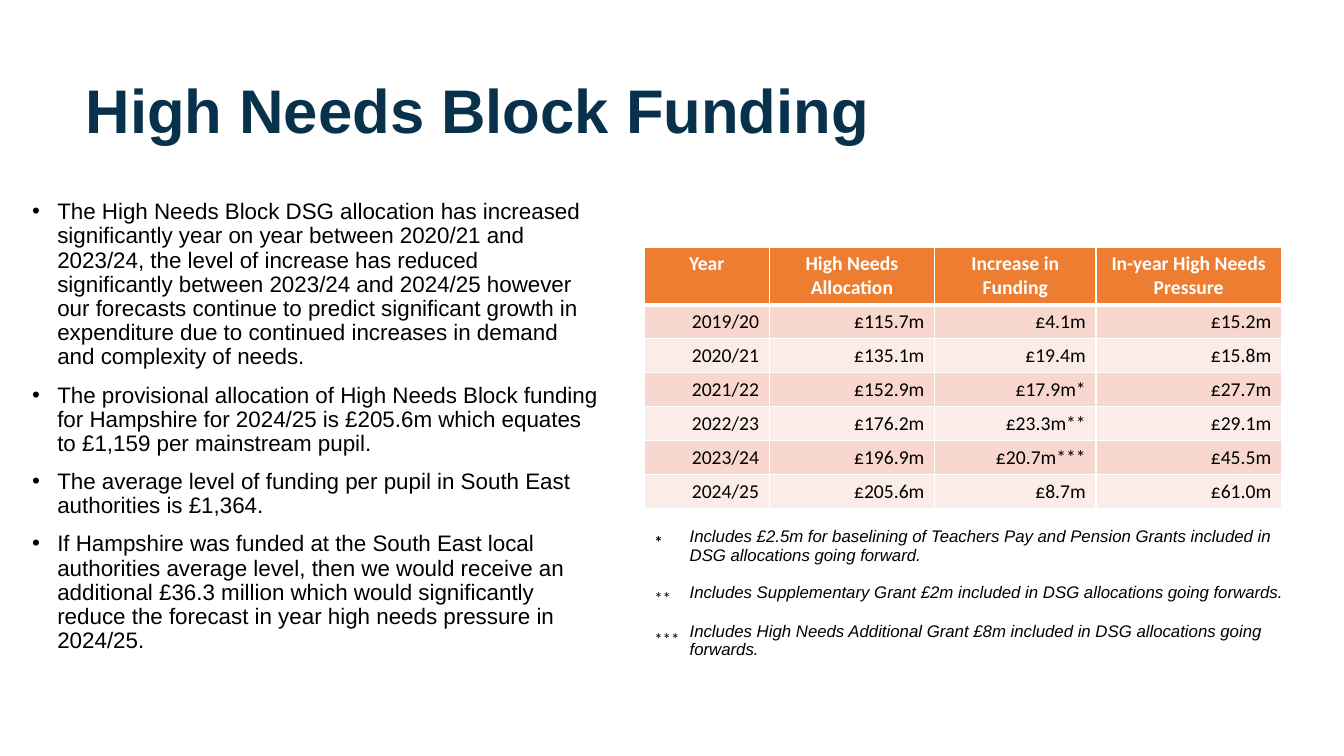
from lxml.etree import SubElement
from pptx import Presentation
from pptx.dml.color import RGBColor
from pptx.enum.text import MSO_ANCHOR, MSO_AUTO_SIZE, PP_ALIGN
from pptx.oxml import parse_xml
from pptx.oxml.ns import nsdecls, qn
from pptx.util import Inches, Pt

NAVY = RGBColor(0x08, 0x31, 0x4C)
ORANGE = RGBColor(0xED, 0x7D, 0x31)
PEACH = RGBColor(0xF8, 0xD7, 0xCE)
BLUSH = RGBColor(0xFC, 0xEC, 0xE8)
WHITE = RGBColor(0xFF, 0xFF, 0xFF)
BLACK = RGBColor(0, 0, 0)

POINTS = [
    "The High Needs Block DSG allocation has increased significantly year on year "
    "between 2020/21 and 2023/24, the level of increase has reduced significantly "
    "between 2023/24 and 2024/25 however our forecasts continue to predict significant "
    "growth in expenditure due to continued increases in demand and complexity of needs.",
    "The provisional allocation of High Needs Block funding for Hampshire for 2024/25 "
    "is £205.6m which equates to £1,159 per mainstream pupil.",
    "The average level of funding per pupil in South East authorities is £1,364.",
    "If Hampshire was funded at the South East local authorities average level, then we "
    "would receive an additional £36.3 million which would significantly reduce the "
    "forecast in year high needs pressure in 2024/25.",
]
FUNDING = [
    ("Year", "High Needs Allocation", "Increase in Funding", "In-year High Needs Pressure"),
    ("2019/20", "£115.7m", "£4.1m", "£15.2m"),
    ("2020/21", "£135.1m", "£19.4m", "£15.8m"),
    ("2021/22", "£152.9m", "£17.9m*", "£27.7m"),
    ("2022/23", "£176.2m", "£23.3m**", "£29.1m"),
    ("2023/24", "£196.9m", "£20.7m***", "£45.5m"),
    ("2024/25", "£205.6m", "£8.7m", "£61.0m"),
]
NOTES = [
    (["*"], ["Includes £2.5m for baselining of Teachers Pay and Pension Grants "
             "included in DSG allocations going forward."]),
    (["**", "***"],
     ["Includes Supplementary Grant £2m included in DSG allocations going forwards.",
      "Includes High Needs Additional Grant £8m included in DSG allocations going forwards."]),
    ([""], [""]),
]


def style(para, name, size, color, bold=False, italic=False):
    font = para.font
    font.name, font.size = name, Pt(size)
    font.bold, font.italic = bold, italic
    font.color.rgb = color


def write(frame, texts, gap=0):
    for num, text in enumerate(texts):
        para = frame.add_paragraph() if num else frame.paragraphs[0]
        para.text = text
        if num:
            para.space_before = Pt(gap)
    return frame.paragraphs


def edge(cell, top=1, bottom=1):
    props = cell._tc.get_or_add_tcPr()
    for side, width in (("L", 1), ("R", 1), ("T", top), ("B", bottom)):
        props.append(parse_xml(
            f'<a:ln{side} {nsdecls("a")} w="{Pt(width)}"><a:solidFill>'
            f'<a:srgbClr val="{WHITE}"/></a:solidFill></a:ln{side}>'))


def add_grid(slide, left, top, cols, rows):
    shape = slide.shapes.add_table(len(rows), len(cols), Inches(left), Inches(top),
                                   Inches(sum(cols)), Inches(sum(rows)))
    table = shape.table
    table.horz_banding = False
    for col, width in zip(table.columns, cols):
        col.width = Inches(width)
    for row, height in zip(table.rows, rows):
        row.height = Inches(height)
    for num in range(len(rows)):
        for cell in table.rows[num].cells:
            edge(cell, 3 if num == 1 else 1, 3 if num == 0 else 1)
    return table


def add_title(slide, text):
    title = slide.shapes.title
    title.left, title.top = Inches(0.75), Inches(0.4)
    title.width, title.height = Inches(11.67), Inches(1.45)
    frame = title.text_frame
    frame.auto_size = MSO_AUTO_SIZE.NONE
    frame.vertical_anchor = MSO_ANCHOR.MIDDLE
    para = write(frame, [text])[0]
    para.alignment, para.line_spacing = PP_ALIGN.LEFT, 0.9
    style(para, "Arial", 44, NAVY, bold=True)


def add_points(slide):
    box = slide.shapes.add_textbox(Inches(0.22), Inches(1.94), Inches(5.82), Inches(5.04))
    box.text_frame.word_wrap = True
    for para in write(box.text_frame, POINTS, 10):
        para.line_spacing = 0.9
        props = para._p.get_or_add_pPr()
        props.set("marL", str(Inches(0.25)))
        props.set("indent", str(-Inches(0.25)))
        SubElement(props, qn("a:buFont")).set("typeface", "Arial")
        SubElement(props, qn("a:buChar")).set("char", "•")
        style(para, "Arial", 16, BLACK)


def add_funding(slide):
    table = add_grid(slide, 6.39, 2.45, [1.24, 1.64, 1.6, 1.84], [0.54] + [0.31] * 6)
    for num, line in enumerate(FUNDING):
        head = num == 0
        for cell, text in zip(table.rows[num].cells, line):
            cell.fill.solid()
            cell.fill.fore_color.rgb = ORANGE if head else PEACH if num % 2 else BLUSH
            para = write(cell.text_frame, [text])[0]
            para.alignment = PP_ALIGN.CENTER if head else PP_ALIGN.RIGHT
            style(para, "Calibri", 14, WHITE if head else BLACK, bold=head)


def add_notes(slide):
    table = add_grid(slide, 6.39, 5.23, [0.45, 6.14], [0.56, 0.94, 0.34])
    for num, (marks, texts) in enumerate(NOTES):
        mark, note = table.rows[num].cells
        mark.fill.background()
        note.fill.background()
        note.margin_left = note.margin_right = note.margin_top = note.margin_bottom = 0
        for para in write(mark.text_frame, marks, 14.6):
            style(para, "Calibri", 12, BLACK, bold=num == 0)
        for para in write(note.text_frame, texts, 13.8):
            style(para, "Arial", 12, BLACK, italic=True)


def main():
    deck = Presentation()
    deck.slide_width, deck.slide_height = Inches(13.33), Inches(7.5)
    slide = deck.slides.add_slide(deck.slide_layouts[5])
    add_title(slide, "High Needs Block Funding")
    add_funding(slide)
    add_points(slide)
    add_notes(slide)
    deck.save("out.pptx")


if __name__ == "__main__":
    main()
